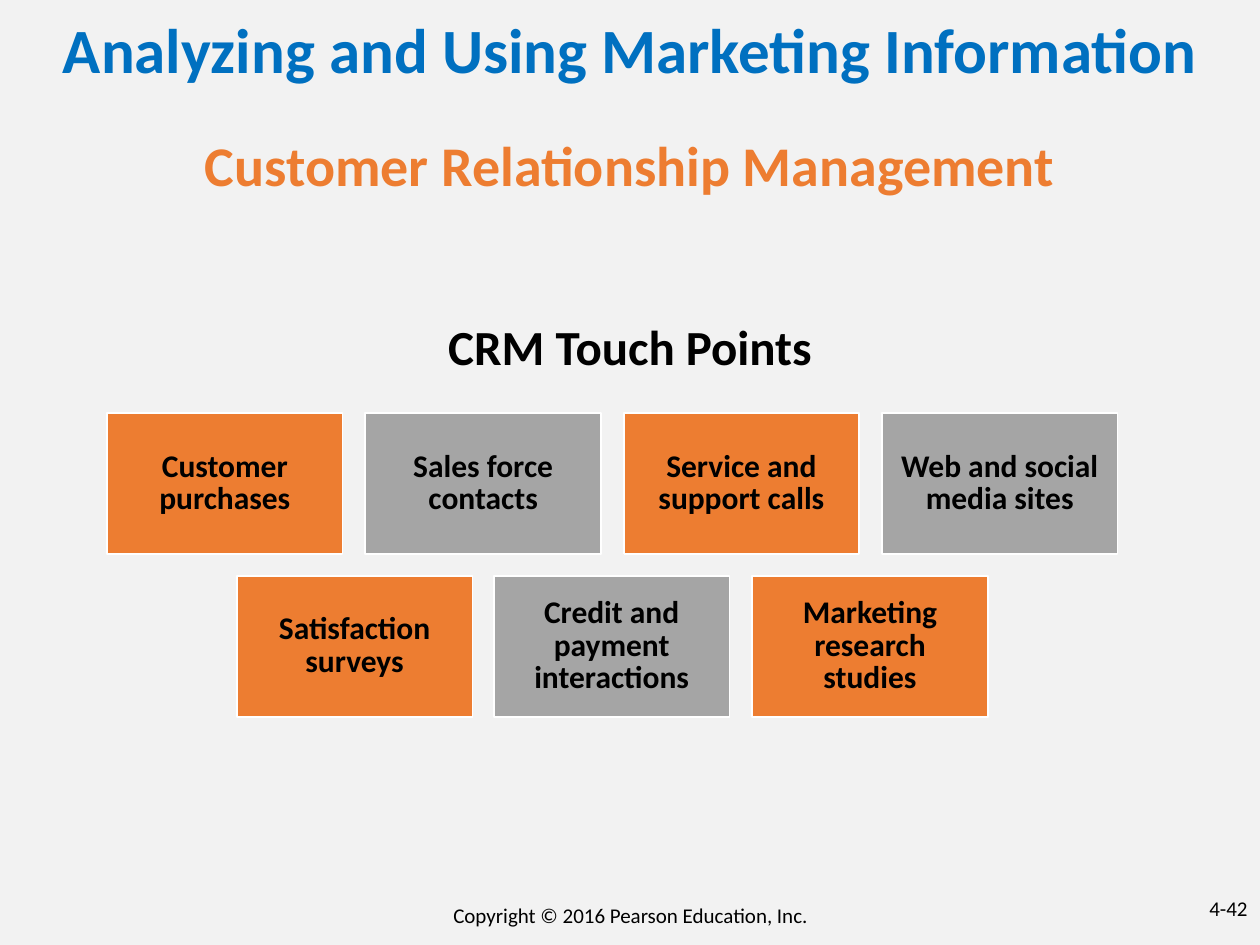
from dataclasses import dataclass

from pptx import Presentation
from pptx.dml.color import RGBColor
from pptx.enum.shapes import MSO_SHAPE as Shape
from pptx.enum.text import MSO_ANCHOR as Anchor, MSO_AUTO_SIZE as AutoSize, PP_ALIGN as Align
from pptx.util import Inches, Pt

SLIDE_WIDTH, SLIDE_HEIGHT = 10, 7.5
TITLE_ONLY = 5


@dataclass(frozen=True)
class Theme:
    font: str = "Calibri"
    background: str = "F2F2F2"
    title: str = "0070C0"
    accent: str = "ED7D31"
    neutral: str = "A5A5A5"
    outline: str = "FFFFFF"
    text: str = "000000"
    title_size: int = 36
    subtitle_size: int = 32
    heading_size: int = 28
    card_size: int = 18
    footer_size: int = 12


@dataclass(frozen=True)
class CardGrid:
    left: float = 0.85
    top: float = 3.28
    width: float = 1.87
    height: float = 1.12
    column_step: float = 2.05
    row_step: float = 1.29

    def box(self, column, row):
        return (self.left + column * self.column_step,
                self.top + row * self.row_step, self.width, self.height)


THEME = Theme()
GRID = CardGrid()
TOUCH_POINTS = [
    ["Customer purchases", "Sales force contacts",
     "Service and support calls", "Web and social media sites"],
    ["Satisfaction surveys", "Credit and payment interactions",
     "Marketing research studies"],
]


def inches(box):
    return [Inches(round(length, 2)) for length in box]


def set_values(target, values):
    for name, value in values.items():
        setattr(target, name, value)


def write(shape, text, size, color=THEME.text, bold=True, spacing=1.0,
          align=Align.CENTER, anchor=Anchor.TOP):
    """Fill a shape with one formatted paragraph."""
    frame = shape.text_frame
    set_values(frame, {"text": text, "word_wrap": True,
                       "auto_size": AutoSize.NONE, "vertical_anchor": anchor})
    paragraph = frame.paragraphs[0]
    set_values(paragraph, {"alignment": align, "line_spacing": spacing})
    font = paragraph.runs[0].font
    set_values(font, {"name": THEME.font, "size": Pt(size), "bold": bold})
    font.color.rgb = RGBColor.from_string(color)


def set_title(slide, text, box):
    title = slide.shapes.title
    set_values(title, dict(zip(("left", "top", "width", "height"), inches(box))))
    write(title, text, THEME.title_size, THEME.title, spacing=0.75, anchor=Anchor.BOTTOM)


def add_text(slide, text, box, size, **formats):
    write(slide.shapes.add_textbox(*inches(box)), text, size, **formats)


def add_card(slide, text, box, fill):
    card = slide.shapes.add_shape(Shape.RECTANGLE, *inches(box))
    card.shadow.inherit = False
    card.fill.solid()
    card.fill.fore_color.rgb = RGBColor.from_string(fill)
    card.line.color.rgb = RGBColor.from_string(THEME.outline)
    card.line.width = Pt(1)
    write(card, text, THEME.card_size, spacing=0.85, anchor=Anchor.MIDDLE)


def add_touch_points(slide):
    """Lay out rows of cards, centring each shorter row under the longest."""
    columns = max(map(len, TOUCH_POINTS))
    for row, labels in enumerate(TOUCH_POINTS):
        offset = (columns - len(labels)) / 2
        for column, label in enumerate(labels):
            fill = THEME.neutral if column % 2 else THEME.accent
            add_card(slide, label, GRID.box(column + offset, row), fill)


def main():
    presentation = Presentation()
    set_values(presentation, {"slide_width": Inches(SLIDE_WIDTH),
                              "slide_height": Inches(SLIDE_HEIGHT)})
    slide = presentation.slides.add_slide(presentation.slide_layouts[TITLE_ONLY])
    background = slide.background.fill
    background.solid()
    background.fore_color.rgb = RGBColor.from_string(THEME.background)

    set_title(slide, "Analyzing and Using Marketing Information", (0.05, 0, 9.9, 0.72))
    add_text(slide, "Customer Relationship Management", (1.25, 1.15, 7.5, 0.88),
             THEME.subtitle_size, color=THEME.accent, spacing=0.66)
    add_text(slide, "CRM Touch Points", (3.03, 2.46, 3.94, 0.57), THEME.heading_size)
    add_touch_points(slide)
    footer = {"size": THEME.footer_size, "bold": False, "anchor": Anchor.BOTTOM}
    add_text(slide, "Copyright © 2016 Pearson Education, Inc.",
             (3.2, 7.05, 3.61, 0.36), **footer)
    add_text(slide, "4-42", (9.19, 7, 0.81, 0.36), align=Align.RIGHT, **footer)
    presentation.save("out.pptx")


if __name__ == "__main__":
    main()
